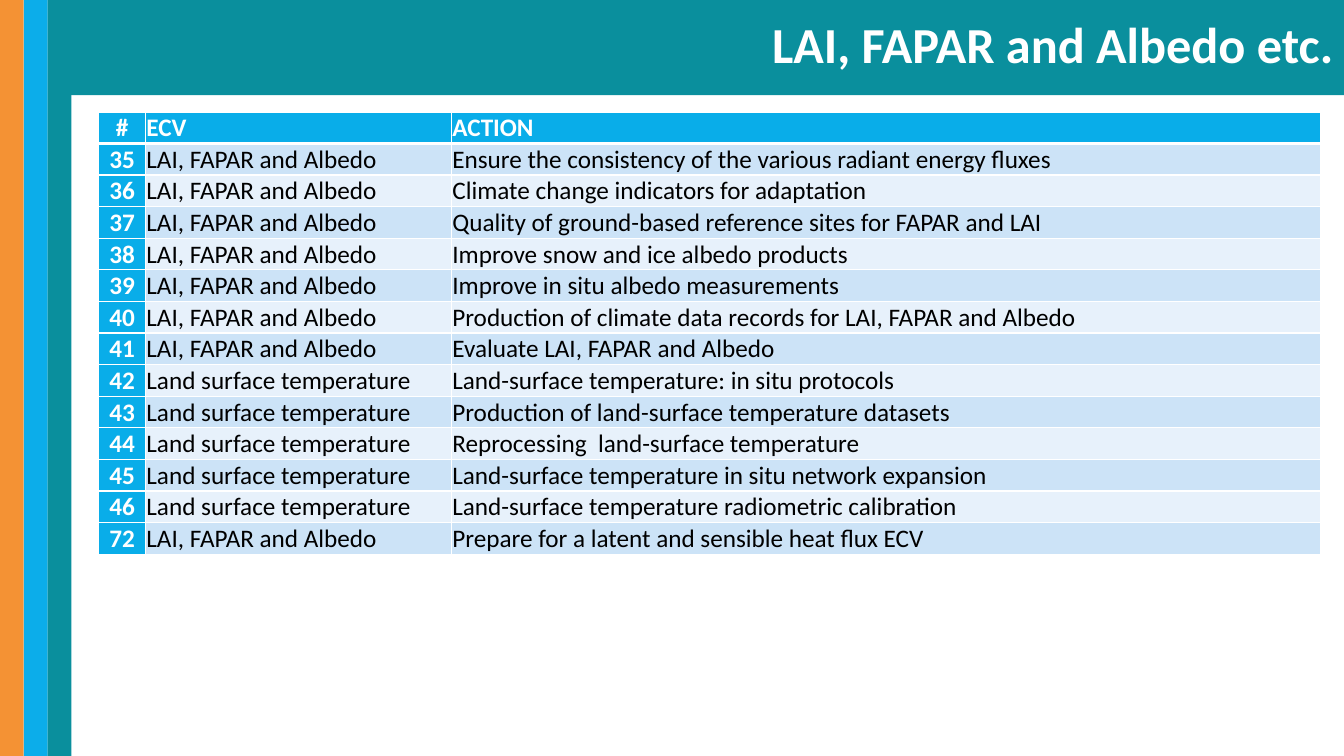
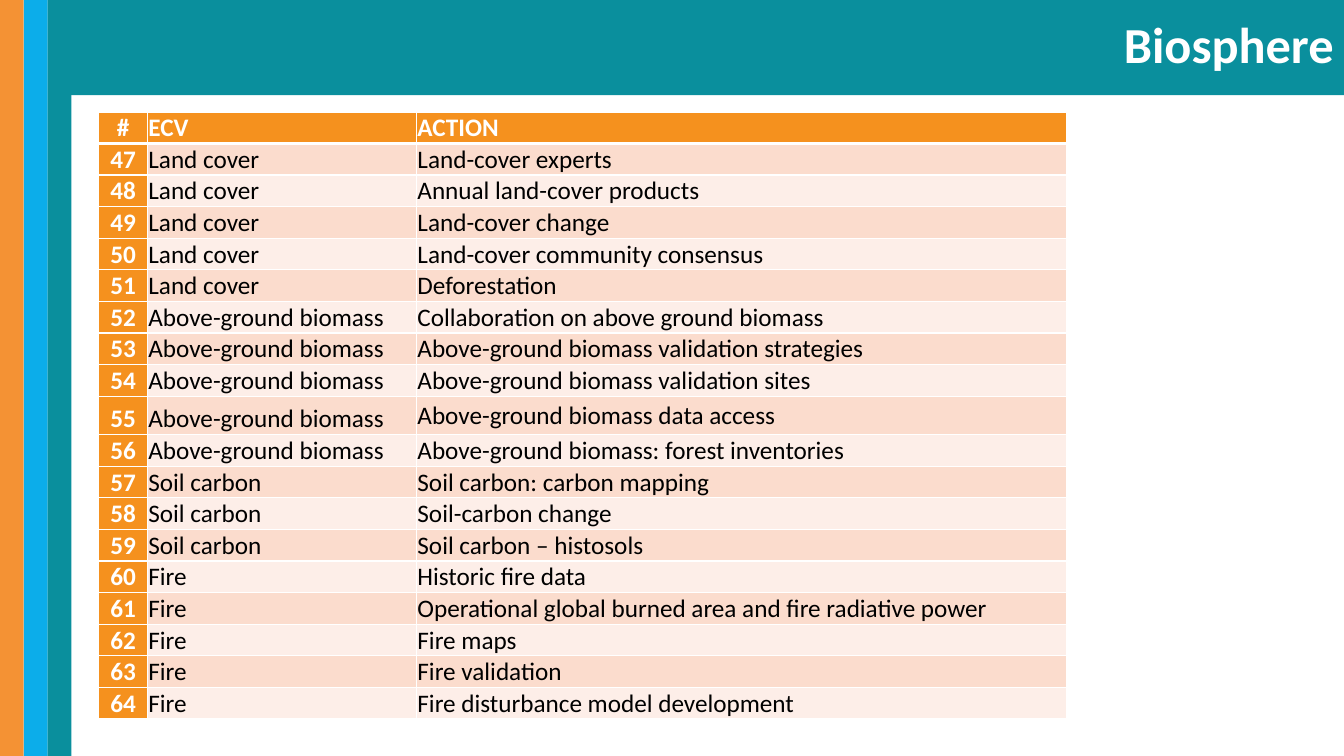
from lxml.etree import SubElement
from pptx import Presentation
from pptx.dml.color import RGBColor
from pptx.enum.shapes import MSO_SHAPE
from pptx.enum.text import MSO_ANCHOR, PP_ALIGN
from pptx.oxml.ns import qn
from pptx.util import Cm, Pt

SLIDE_WIDTH, SLIDE_HEIGHT = 33.87, 19.05
BLUE_TABLE = {"strong": "09ADE9", "bands": ("CCE3F7", "E7F1FB")}
ORANGE_TABLE = {"strong": "F5911E", "bands": ("FBDCCD", "FDEEE8")}


def color(hex_text):
    return RGBColor.from_string(hex_text)


def apply(target, values):
    for name, value in values.items():
        setattr(target, name, value)


class ActionDeck:
    FONT = "Calibri"
    WHITE, BLACK, TEAL = "FFFFFF", "000000", "0A8F9D"
    STRIPES = ("F49234", "0CADEA", TEAL)
    STRIPE_WIDTH = 0.6
    HEADINGS = ("#", "ECV", "ACTION")
    ALIGNMENTS = (PP_ALIGN.CENTER, PP_ALIGN.LEFT, PP_ALIGN.JUSTIFY)
    CELL = {
        "margin_left": Cm(0.02),
        "margin_right": Cm(0.02),
        "margin_top": Cm(0.02),
        "margin_bottom": Cm(0),
    }

    def __init__(self):
        self.deck = Presentation()
        apply(self.deck, {"slide_width": Cm(SLIDE_WIDTH), "slide_height": Cm(SLIDE_HEIGHT)})
        self.slide = None

    def start_slide(self, heading):
        self.slide = self.deck.slides.add_slide(self.deck.slide_layouts[5])
        self.stripes()
        self.title(heading)

    def stripes(self):
        for index, fill in enumerate(self.STRIPES):
            stripe = self.slide.shapes.add_shape(
                MSO_SHAPE.RECTANGLE, Cm(index * self.STRIPE_WIDTH), Cm(0),
                Cm(self.STRIPE_WIDTH), Cm(SLIDE_HEIGHT))
            stripe.shadow.inherit = False
            stripe.fill.solid()
            stripe.fill.fore_color.rgb = color(fill)
            stripe.line.fill.background()

    def title(self, heading):
        left = 1.45
        title = self.slide.shapes.title
        apply(title, {"left": Cm(left), "top": Cm(0),
                      "width": Cm(SLIDE_WIDTH - left), "height": Cm(2.4)})
        title.fill.solid()
        title.fill.fore_color.rgb = color(self.TEAL)
        title.text_frame.vertical_anchor = MSO_ANCHOR.MIDDLE
        self.styled_text(title.text_frame, heading, PP_ALIGN.RIGHT, 36, self.WHITE, True)
        title.text_frame.paragraphs[0].line_spacing = 0.9

    def styled_text(self, frame, text, alignment, size, ink, bold):
        frame.text = text
        paragraph = frame.paragraphs[0]
        paragraph.alignment = alignment
        font = paragraph.runs[0].font
        apply(font, {"name": self.FONT, "size": Pt(size), "bold": bold})
        font.color.rgb = color(ink)

    def borders(self, cell, row):
        widths = {"a:lnL": 1, "a:lnR": 1, "a:lnT": 3 if row == 1 else 1,
                  "a:lnB": 3 if row == 0 else 1}
        properties = cell._tc.get_or_add_tcPr()
        for tag, width in widths.items():
            edge = SubElement(properties, qn(tag), w=str(int(Pt(width))))
            paint = SubElement(edge, qn("a:solidFill"))
            SubElement(paint, qn("a:srgbClr"), val=self.WHITE)

    def cell(self, cell, text, row, column, palette):
        emphasized = row == 0 or column == 0
        middle = row > 0 and column == 2
        alignment = PP_ALIGN.LEFT if row == 0 and column else self.ALIGNMENTS[column]
        self.styled_text(cell.text_frame, text, alignment, 18,
                         self.WHITE if emphasized else self.BLACK, emphasized)
        apply(cell, self.CELL)
        cell.vertical_anchor = MSO_ANCHOR.MIDDLE if middle else MSO_ANCHOR.BOTTOM
        self.borders(cell, row)
        cell.fill.solid()
        cell.fill.fore_color.rgb = color(
            palette["strong"] if emphasized else palette["bands"][(row - 1) % 2])

    def action_table(self, groups, widths, palette, tall_number=None):
        records = [self.HEADINGS] + [
            (str(number), variable, action)
            for first, variable, actions in groups
            for number, action in enumerate(actions, first)]
        heights = [0.97 if record[0] == tall_number else 0.79 for record in records]
        table = self.slide.shapes.add_table(
            len(records), len(widths), Cm(2.49), Cm(2.82),
            Cm(sum(widths)), Cm(sum(heights))).table
        for column, width in zip(table.columns, widths):
            column.width = Cm(width)
        for row, (record, height) in enumerate(zip(records, heights)):
            table.rows[row].height = Cm(height)
            for column, text in enumerate(record):
                self.cell(table.cell(row, column), text, row, column, palette)


RADIATION_ACTIONS = [
    (35, "LAI, FAPAR and Albedo", [
        "Ensure the consistency of the various radiant energy fluxes",
        "Climate change indicators for adaptation",
        "Quality of ground-based reference sites for FAPAR and LAI",
        "Improve snow and ice albedo products",
        "Improve in situ albedo measurements",
        "Production of climate data records for LAI, FAPAR and Albedo",
        "Evaluate LAI, FAPAR and Albedo",
    ]),
    (42, "Land surface temperature", [
        "Land-surface temperature: in situ protocols",
        "Production of land-surface temperature datasets",
        "Reprocessing  land-surface temperature",
        "Land-surface temperature in situ network expansion",
        "Land-surface temperature radiometric calibration",
    ]),
    (72, "LAI, FAPAR and Albedo", ["Prepare for a latent and sensible heat flux ECV"]),
]

BIOSPHERE_ACTIONS = [
    (47, "Land cover", [
        "Land-cover experts",
        "Annual land-cover products",
        "Land-cover change",
        "Land-cover community consensus",
        "Deforestation",
    ]),
    (52, "Above-ground biomass", [
        "Collaboration on above ground biomass",
        "Above-ground biomass validation strategies",
        "Above-ground biomass validation sites",
        "Above-ground biomass data access",
        "Above-ground biomass: forest inventories",
    ]),
    (57, "Soil carbon", [
        "Soil carbon: carbon mapping",
        "Soil-carbon change",
        "Soil carbon – histosols",
    ]),
    (60, "Fire", [
        "Historic fire data",
        "Operational global burned area and fire radiative power",
        "Fire maps",
        "Fire validation",
        "Fire disturbance model development",
    ]),
]


def main():
    actions = ActionDeck()
    actions.start_slide("LAI, FAPAR and Albedo etc.")
    actions.action_table(RADIATION_ACTIONS, (1.18, 7.71, 21.9), BLUE_TABLE)
    actions.start_slide("Biosphere")
    actions.action_table(BIOSPHERE_ACTIONS, (1.23, 6.78, 16.37), ORANGE_TABLE, "55")
    actions.deck.save("out.pptx")


if __name__ == "__main__":
    main()
